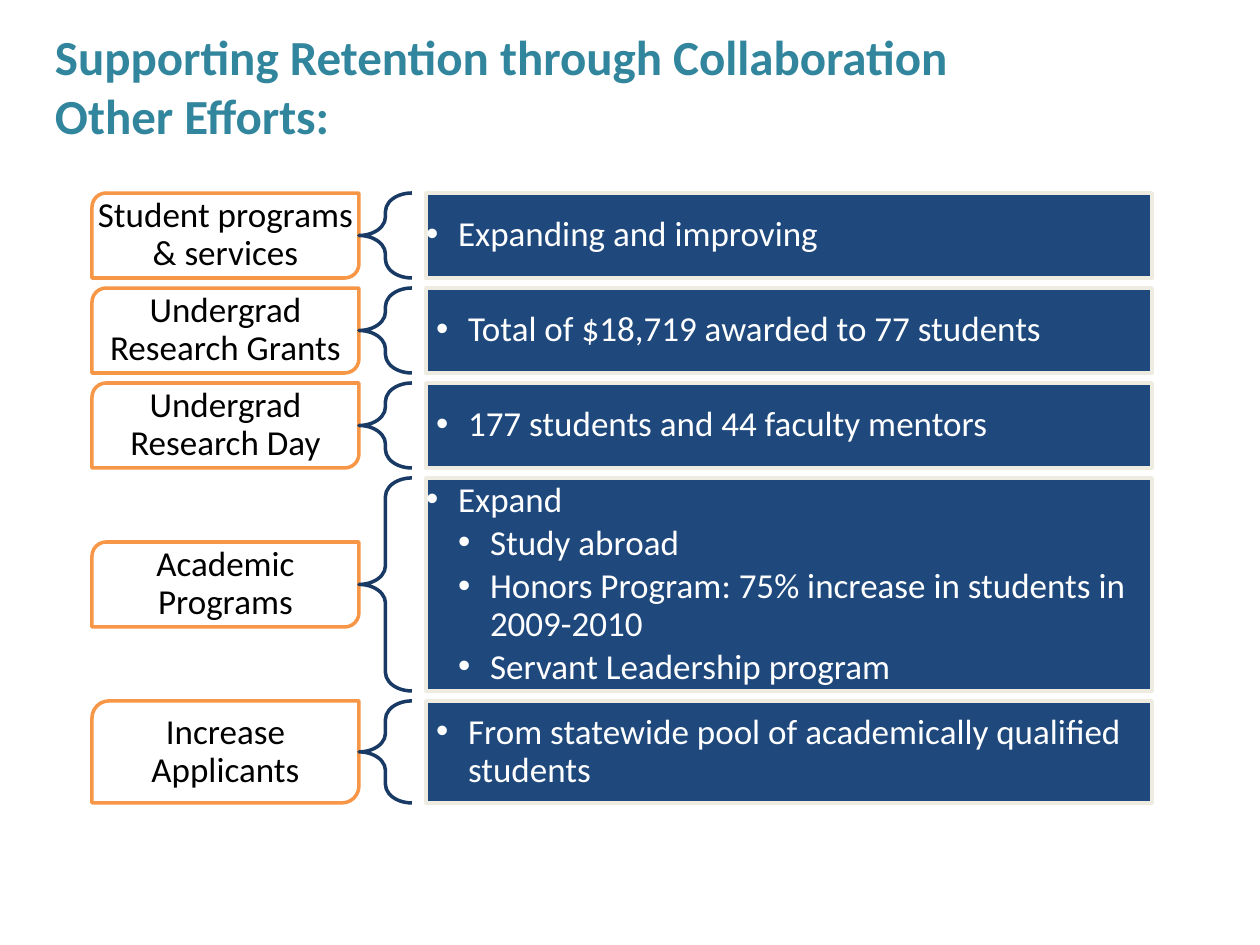
from lxml import etree
from pptx import Presentation
from pptx.dml.color import RGBColor
from pptx.enum.shapes import MSO_SHAPE
from pptx.enum.text import MSO_ANCHOR, PP_ALIGN
from pptx.oxml.ns import qn
from pptx.util import Emu, Pt

LABEL_SHAPE = MSO_SHAPE.ROUND_2_DIAG_RECTANGLE
BRACE_SHAPE = MSO_SHAPE.LEFT_BRACE
DETAIL_SHAPE = MSO_SHAPE.RECTANGLE
TOP, MIDDLE = MSO_ANCHOR.TOP, MSO_ANCHOR.MIDDLE
LEFT, CENTER = PP_ALIGN.LEFT, PP_ALIGN.CENTER

TEAL = RGBColor(0x31, 0x85, 0x9C)
ORANGE = RGBColor(0xF7, 0x96, 0x46)
NAVY = RGBColor(0x1F, 0x49, 0x7D)
DARK_NAVY = RGBColor(0x19, 0x3A, 0x64)
CREAM = RGBColor(0xEE, 0xEC, 0xE1)
WHITE = RGBColor(0xFF, 0xFF, 0xFF)
BLACK = RGBColor(0, 0, 0)

FONT = "Calibri"
INDENT = 32
LABEL_HEIGHT = 85
ROW_GAP = 10

TITLE_LINES = ["Supporting Retention through Collaboration", "Other Efforts:"]
EFFORTS = [
    (85, "Student programs & services", (0, 0), 0, [(1, "Expanding and improving")]),
    (85, "Undergrad Research Grants", (0, 0), 10,
     [(1, "Total of $18,719 awarded to 77 students")]),
    (85, "Undergrad Research Day", (0, 0), 10,
     [(1, "177 students and 44 faculty mentors")]),
    (213, "Academic Programs", (0, 0), 0,
     [(1, "Expand"),
      (2, "Study abroad"),
      (2, "Honors Program: 75% increase in students in 2009-2010"),
      (2, "Servant Leadership program")]),
    (102, "Increase Applicants", (20, 8), 10,
     [(1, "From statewide pool of academically qualified students")]),
]


def px(length):
    """Turn slide pixels into EMU at 126 pixels to the inch."""
    return Emu(round(length * 914400 / 126))


def style_font(font, size, color, bold=False):
    """Set the face, size, colour and weight of a font."""
    font.name, font.size, font.bold = FONT, Pt(size), bold
    font.color.rgb = color


def set_frame(frame, anchor, across, down):
    """Wrap a text frame and set its anchor and insets."""
    frame.word_wrap = True
    frame.vertical_anchor = anchor
    frame.margin_left = frame.margin_right = px(across)
    frame.margin_top = frame.margin_bottom = px(down)


def add_outlined(slide, preset, box, line_color, fill_color=None):
    """Add a preset shape with a two-point outline and optional fill."""
    shape = slide.shapes.add_shape(preset, *map(px, box))
    shape.shadow.inherit = False
    shape.line.color.rgb = line_color
    shape.line.width = Pt(2)
    if fill_color is None:
        shape.fill.background()
    else:
        shape.fill.solid()
        shape.fill.fore_color.rgb = fill_color
    return shape


def add_title(slide, box):
    """Place the two-line heading."""
    heading = slide.shapes.add_textbox(*map(px, box)).text_frame
    set_frame(heading, TOP, 13, 6)
    paragraph = heading.paragraphs[0]
    for index, line in enumerate(TITLE_LINES):
        if index:
            paragraph.add_line_break()
        run = paragraph.add_run()
        run.text = line
        style_font(run.font, 28, TEAL, True)


def add_label(slide, box, name, insets):
    """Place the name of one effort."""
    label = add_outlined(slide, LABEL_SHAPE, box, ORANGE, WHITE).text_frame
    set_frame(label, MIDDLE, *insets)
    paragraph = label.paragraphs[0]
    paragraph.alignment = CENTER
    paragraph.line_spacing = 0.9
    run = paragraph.add_run()
    run.text = name
    style_font(run.font, 20, BLACK)


def add_details(slide, box, inset, points):
    """Place the bulleted panel of one effort."""
    panel = add_outlined(slide, DETAIL_SHAPE, box, CREAM, NAVY).text_frame
    set_frame(panel, MIDDLE, inset, inset)
    for index, (level, point) in enumerate(points):
        paragraph = panel.add_paragraph() if index else panel.paragraphs[0]
        properties = paragraph._p.get_or_add_pPr()
        properties.set("marL", str(px(INDENT * level)))
        properties.set("indent", str(-px(INDENT)))
        etree.SubElement(properties, qn("a:buFont"), typeface="Arial")
        etree.SubElement(properties, qn("a:buChar"), char="•")
        paragraph.level = level
        paragraph.alignment = LEFT
        paragraph.line_spacing = 0.9
        paragraph.space_before = Pt(3 if index else 0)
        run = paragraph.add_run()
        run.text = point
        style_font(run.font, 20, WHITE)


def add_effort(slide, box, name, label_insets, detail_inset, points):
    """Place one row of label, brace and details in its box."""
    left, top, width, height = box
    label_height = LABEL_HEIGHT if len(points) > 1 else height
    label_top = top + (height - label_height) // 2
    add_label(slide, (left, label_top, 267, label_height), name, label_insets)
    brace = add_outlined(slide, BRACE_SHAPE, (left + 267, top, 53, height), DARK_NAVY)
    brace.adjustments[0] = 0.35
    brace.adjustments[1] = 0.5
    add_details(slide, (left + 334, top, width - 334, height), detail_inset, points)


def add_efforts(slide, box):
    """Stack the effort rows down from the top of the box."""
    left, top, width = box
    for height, *content in EFFORTS:
        add_effort(slide, (left, top, width, height), *content)
        top += height + ROW_GAP


def main():
    """Build and save the slide."""
    deck = Presentation()
    deck.slide_width, deck.slide_height = px(1260), px(945)
    slide = deck.slides.add_slide(deck.slide_layouts[6])
    add_title(slide, (42, 21, 1147, 101))
    add_efforts(slide, (92, 193, 1060))
    deck.save("out.pptx")


if __name__ == "__main__":
    main()
